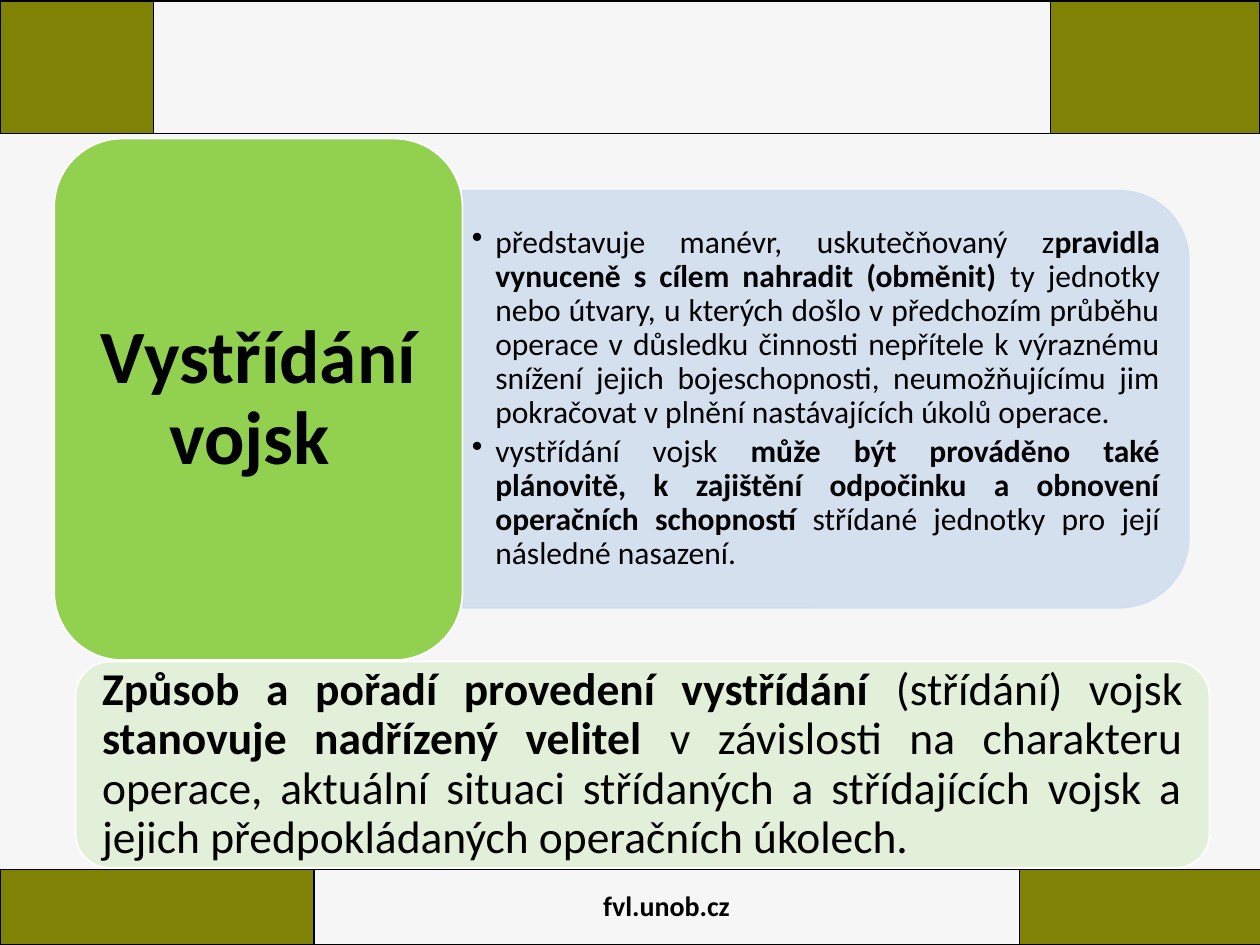
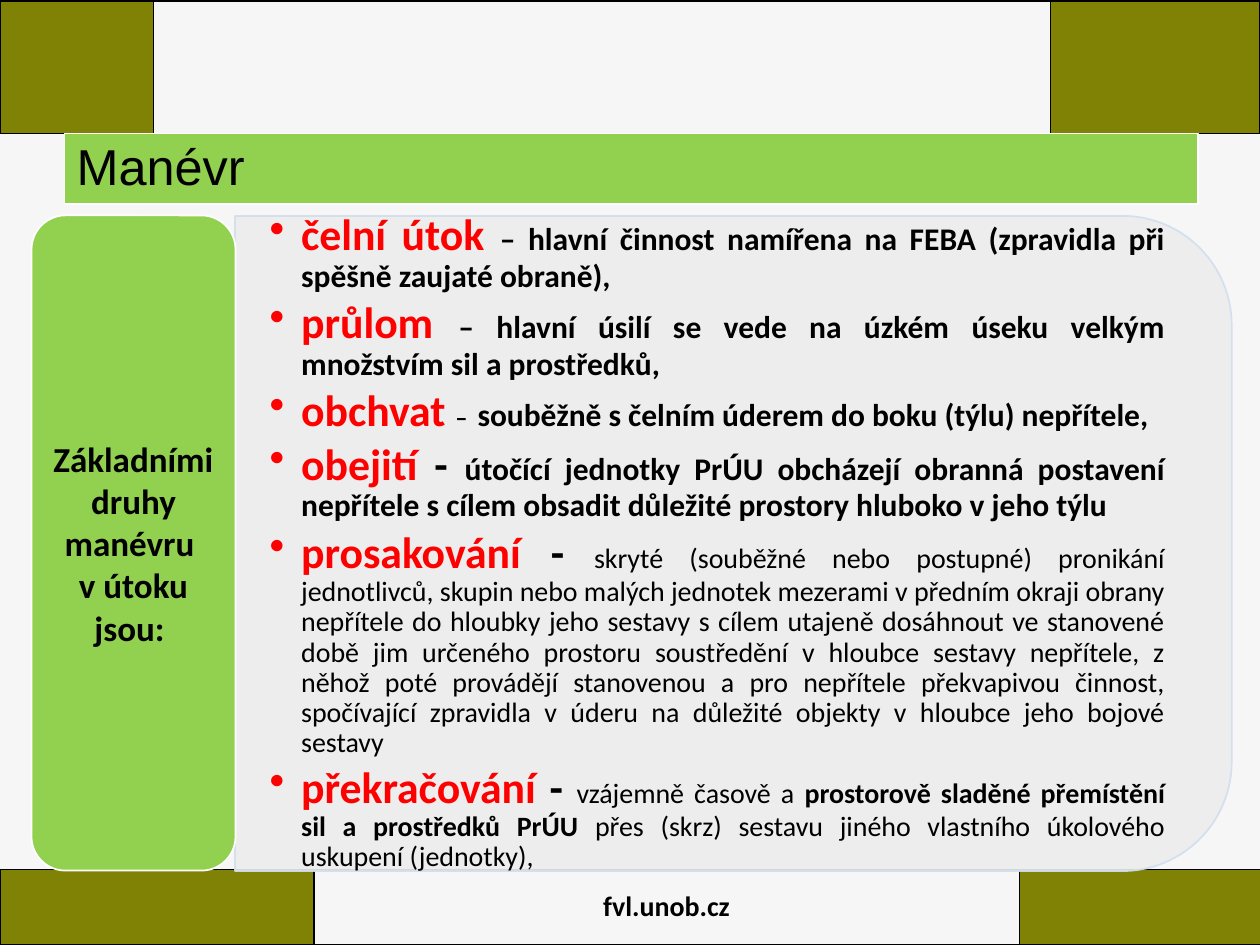
"""Builds two slides on troop relief and the kinds of manoeuvre."""
from lxml.etree import SubElement
from pptx import Presentation
from pptx.dml.color import RGBColor
from pptx.enum.shapes import MSO_SHAPE as Shp
from pptx.enum.text import MSO_ANCHOR as Anchor, PP_ALIGN as Align
from pptx.oxml.ns import qn
from pptx.util import Pt

HUES = {
    "page": "F6F6F6", "olive": "808206", "green": "92D050", "pale": "E2F0D9",
    "blue": "D2DEEF", "grey": "EDEDED", "white": "FFFFFF", "black": "000000",
    "red": "FF0000",
}
WIDE, TALL = 720, 540

HEAD = dict(top=0.7, high=75.6, cols=(87.8, 512.6, 119.6), text="")
FOOT = dict(top=496.8, high=43.2, cols=(179.3, 403.2, 138.2), text="fvl.unob.cz")

RELIEF = [[("Vystřídání vojsk ", 43, True)]]
FACTS = [
    [("představuje manévr, uskutečňovaný z", 18, False),
     ("pravidla vynuceně s cílem nahradit (obměnit) ", 18, True),
     ("ty jednotky nebo útvary, u kterých došlo v předchozím průběhu operace "
      "v důsledku činnosti nepřítele k výraznému snížení jejich bojeschopnosti, "
      "neumožňujícímu jim pokračovat v plnění nastávajících úkolů operace. ",
      18, False)],
    [("vystřídání vojsk ", 18, False),
     ("může být prováděno také plánovitě, k zajištění odpočinku a obnovení "
      "operačních schopností ", 18, True),
     ("střídané jednotky pro její následné nasazení.", 18, False)],
]
ORDER = [
    [("Způsob a pořadí provedení vystřídání", 26, True),
     (" (střídání) vojsk ", 26, False),
     ("stanovuje nadřízený velitel", 26, True),
     (" v závislosti na charakteru operace, aktuální situaci střídaných "
      "a střídajících vojsk a jejich předpokládaných operačních úkolech. ",
      26, False)],
]
TITLE = "Manévr"
LABEL = [[("Základními druhy manévru ", 20, True)], [("v útoku jsou: ", 20, True)]]
KINDS = [
    ("čelní útok ",
     [("– hlavní činnost namířena na FEBA (zpravidla při spěšně zaujaté obraně),",
       18, True)]),
    ("průlom ",
     [("– hlavní úsilí se vede na úzkém úseku velkým množstvím sil a prostředků,",
       18, True)]),
    ("obchvat ",
     [("–", 14, True), (" ", 25, True),
      ("souběžně s čelním úderem do boku (týlu) nepřítele,", 18, True)]),
    ("obejití",
     [(" - ", 25, True),
      ("útočící jednotky PrÚU obcházejí obranná postavení nepřítele s cílem "
       "obsadit důležité prostory hluboko v jeho týlu", 18, True)]),
    ("prosakování ",
     [("- ", 25, True),
      ("skryté (souběžné nebo postupné) pronikání jednotlivců, skupin nebo malých "
       "jednotek mezerami v předním okraji obrany nepřítele do hloubky jeho sestavy "
       "s cílem utajeně dosáhnout ve stanovené době jim určeného prostoru "
       "soustředění v hloubce sestavy nepřítele, z něhož poté provádějí stanovenou "
       "a pro nepřítele překvapivou činnost, spočívající zpravidla v úderu na "
       "důležité objekty v hloubce jeho bojové sestavy", 16, False)]),
    ("překračování",
     [(" - ", 25, True), ("vzájemně časově a ", 16, False),
      ("prostorově sladěné přemístění sil a prostředků PrÚU", 16, True),
      (" přes (skrz) sestavu jiného vlastního úkolového uskupení (jednotky), ",
       16, False)]),
]


def hue(name):
    return RGBColor.from_string(HUES[name])


def add_run(para, text, size, bold=False, tint="black", face="Calibri"):
    run = para.add_run()
    run.text = text
    font = run.font
    font.size, font.bold, font.name = Pt(size), bold, face
    font.color.rgb = hue(tint)


def write(shape, paras, align, inset, space=0.9, bullet=0, after=0):
    frame = shape.text_frame
    frame.word_wrap = True
    frame.vertical_anchor = Anchor.MIDDLE
    frame.margin_left = frame.margin_right = Pt(inset[0])
    frame.margin_top = frame.margin_bottom = Pt(inset[1])
    for num, runs in enumerate(paras):
        para = frame.add_paragraph() if num else frame.paragraphs[0]
        para.alignment, para.line_spacing = align, space
        para.space_after = Pt(after)
        if bullet:
            props = para._p.get_or_add_pPr()
            props.set("marL", str(Pt(bullet)))
            props.set("indent", str(-Pt(bullet)))
            SubElement(props, qn("a:buChar")).set("char", "•")
        for run in runs:
            add_run(para, *run)


def add_box(slide, kind, box, fill, line="white", width=1):
    shape = slide.shapes.add_shape(kind, *map(Pt, box))
    shape.shadow.inherit = False
    shape.fill.solid()
    shape.fill.fore_color.rgb = hue(fill)
    shape.line.color.rgb = hue(line)
    shape.line.width = Pt(width)
    return shape


def add_tab(slide, box, fill):
    left, top, wide, high = box
    turned = (left + (wide - high) / 2, top + (high - wide) / 2, high, wide)
    shape = add_box(slide, Shp.ROUND_2_SAME_RECTANGLE, turned, fill, "blue")
    shape.rotation = 90
    for tint in shape._element.spPr.iter(qn("a:srgbClr")):
        SubElement(tint, qn("a:alpha")).set("val", "90000")


def add_text(slide, box, *args, **opts):
    write(slide.shapes.add_textbox(*map(Pt, box)), *args, **opts)


def add_edges(cell):
    props = cell._tc.get_or_add_tcPr()
    for num, side in enumerate(("a:lnL", "a:lnR", "a:lnT", "a:lnB")):
        edge = props.makeelement(qn(side), {"w": str(Pt(1))})
        fill = SubElement(edge, qn("a:solidFill"))
        SubElement(fill, qn("a:srgbClr")).set("val", HUES["black"])
        props.insert(num, edge)


def add_band(slide, top, high, cols, text):
    table = slide.shapes.add_table(
        1, len(cols), 0, Pt(top), Pt(sum(cols)), Pt(high)).table
    table.first_row = table.horz_banding = False
    table.rows[0].height = Pt(high)
    for num, wide in enumerate(cols):
        table.columns[num].width = Pt(wide)
        cell = table.cell(0, num)
        if num == 1:
            cell.fill.background()
        else:
            cell.fill.solid()
            cell.fill.fore_color.rgb = hue("olive")
        add_edges(cell)
    if text:
        mid = table.cell(0, 1)
        mid.vertical_anchor = Anchor.MIDDLE
        para = mid.text_frame.paragraphs[0]
        para.alignment = Align.CENTER
        add_run(para, text, 16, True)


def new_slide(deck):
    slide = deck.slides.add_slide(deck.slide_layouts[6])
    slide.background.fill.solid()
    slide.background.fill.fore_color.rgb = hue("page")
    for band in (FOOT, HEAD):
        add_band(slide, **band)
    return slide


def relief_slide(deck):
    slide = new_slide(deck)
    add_tab(slide, (264.6, 109, 414.7, 238.3), "blue")
    add_text(slide, (264.6, 120.2, 403.2, 215.3), FACTS, Align.JUSTIFY,
             (5, 3), bullet=13.5, after=2.7)
    card = add_box(slide, Shp.ROUNDED_RECTANGLE, (31, 79.2, 233.3, 298), "green")
    write(card, RELIEF, Align.CENTER, (13, 6.5))
    note = add_box(slide, Shp.ROUNDED_RECTANGLE, (43.2, 378, 648, 118), "pale")
    write(note, ORDER, Align.JUSTIFY, (9.4, 8))


def kinds_slide(deck):
    slide = new_slide(deck)
    bar = add_box(slide, Shp.RECTANGLE, (36.7, 76.3, 648, 40.3), "green", width=0.75)
    write(bar, [[(TITLE, 28.8, False, "black", "Arial")]], Align.LEFT, (7.2, 3.6))
    add_tab(slide, (134.3, 123.4, 569.5, 374.4), "grey")
    paras = [[(name, 25, True, "red")] + runs for name, runs in KINDS]
    add_text(slide, (134.6, 141.1, 550.8, 338.4), paras, Align.JUSTIFY,
             (19.5, 10), bullet=18, after=3.75)
    card = add_box(slide, Shp.ROUNDED_RECTANGLE, (18, 123.1, 116.6, 374.4), "green")
    write(card, LABEL, Align.CENTER, (6, 3), space=1)


def main():
    deck = Presentation()
    deck.slide_width, deck.slide_height = Pt(WIDE), Pt(TALL)
    relief_slide(deck)
    kinds_slide(deck)
    deck.save("out.pptx")


if __name__ == "__main__":
    main()
